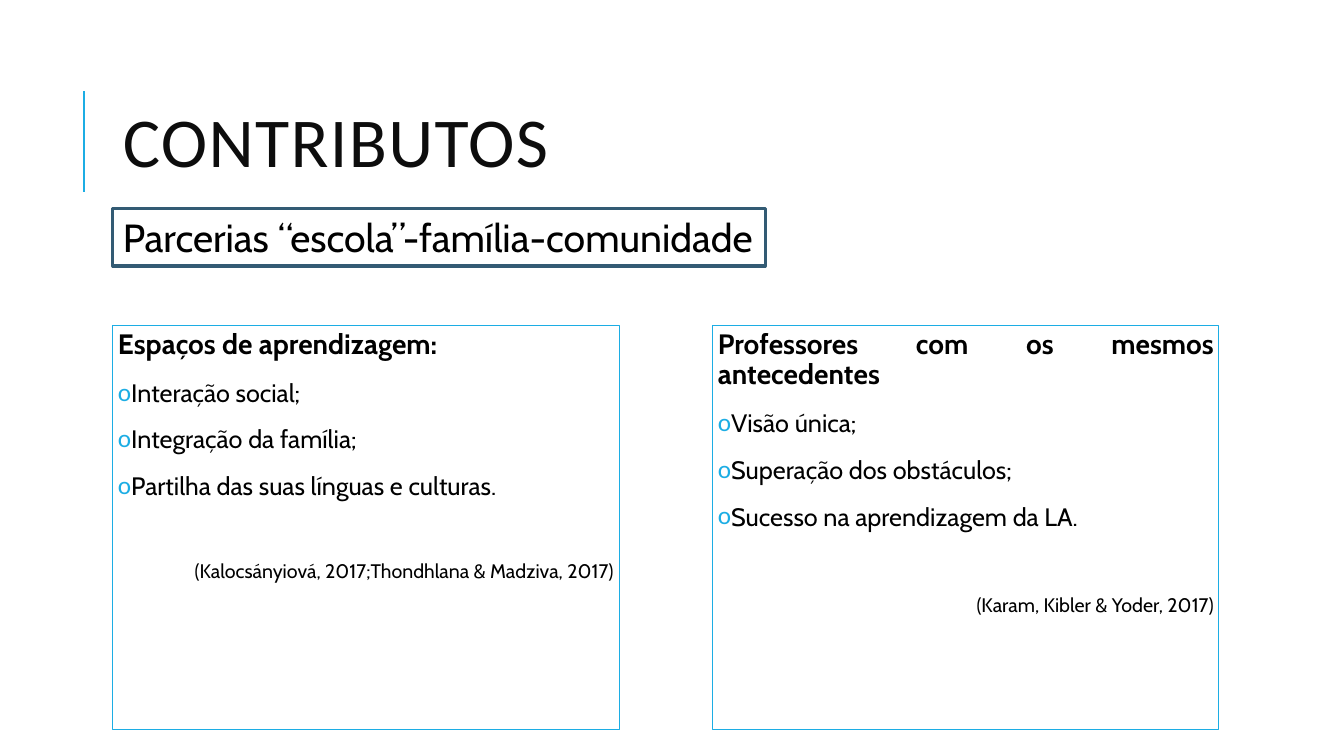
from lxml.etree import SubElement
from pptx import Presentation
from pptx.dml.color import RGBColor
from pptx.enum.shapes import MSO_CONNECTOR as Connector, MSO_SHAPE as Shape
from pptx.enum.text import MSO_ANCHOR as Anchor, PP_ALIGN as Align
from pptx.oxml.ns import qn
from pptx.util import Inches, Pt

COLORS = {"accent": "1CADE4", "frame": "335B74", "title": "0D0D0D", "text": "000000"}
WIDTH, HEIGHT = 13.33, 7.5
LEFT = 1.12
COLUMN_WIDTH, COLUMN_PITCH = 5.02, 5.95
INDENT = Inches(0.1)

COLUMNS = [
    {
        "heading": "Espaços de aprendizagem:",
        "items": ["Interação social;", "Integração da família;",
                  "Partilha das suas línguas e culturas."],
        "citation": "(Kalocsányiová, 2017;Thondhlana & Madziva, 2017)",
        "citation_gap": 41.3,
    },
    {
        "heading": "Professores com os mesmos antecedentes",
        "items": ["Visão única;", "Superação dos obstáculos;",
                  "Sucesso na aprendizagem da LA."],
        "citation": "(Karam, Kibler & Yoder, 2017)",
        "citation_gap": 43.5,
    },
]


def color(name):
    return RGBColor.from_string(COLORS[name])


def set_values(target, values):
    for name, value in values.items():
        setattr(target, name, value)


def style_line(line, name, width):
    line.color.rgb = color(name)
    line.width = Pt(width)


def write(paragraph, text, size, font="Cabin", ink="text", bold=False, **layout):
    run = paragraph.add_run()
    run.text = text
    set_values(run.font, {"name": font, "size": Pt(size), "bold": bold})
    run.font.color.rgb = color(ink)
    set_values(paragraph, layout)
    return run


def add_bullet(paragraph):
    properties = paragraph._p.get_or_add_pPr()
    properties.set("marL", str(INDENT))
    properties.set("indent", str(-INDENT))
    bullet_color = SubElement(properties, qn("a:buClr"))
    SubElement(bullet_color, qn("a:srgbClr"), val=COLORS["accent"])
    SubElement(properties, qn("a:buFont"), typeface="Calibri")
    SubElement(properties, qn("a:buChar"), char="o")


def add_frame(slide, box, line_color, line_width, anchor):
    shape = slide.shapes.add_shape(Shape.RECTANGLE, *map(Inches, box))
    shape.shadow.inherit = False
    shape.fill.background()
    style_line(shape.line, line_color, line_width)
    set_values(shape.text_frame, {"word_wrap": True, "vertical_anchor": anchor})
    return shape.text_frame


def add_title(slide, box, text):
    left, top, width, height = box
    rule_left, rule_top, rule_bottom = (
        Inches(value) for value in (left - 0.29, top + 0.26, top + 1.26))
    rule = slide.shapes.add_connector(
        Connector.STRAIGHT, rule_left, rule_bottom, rule_left, rule_top)
    style_line(rule.line, "accent", 1.5)
    SubElement(rule._element.spPr, qn("a:effectLst"))

    frame = slide.shapes.add_textbox(*map(Inches, box)).text_frame
    set_values(frame, {"word_wrap": True, "vertical_anchor": Anchor.MIDDLE})
    run = write(frame.paragraphs[0], text, 50, "Calibri", "title", line_spacing=0.8)
    run.font._element.set("spc", "100")


def add_subtitle(slide, box, text):
    frame = add_frame(slide, box, "frame", 2.25, Anchor.TOP)
    write(frame.paragraphs[0], text, 28, alignment=Align.LEFT)


def add_column(slide, box, content):
    frame = add_frame(slide, box, "accent", 0.75, Anchor.TOP)
    sides = ("left", "top", "right", "bottom")
    set_values(frame, {f"margin_{side}": Inches(0.05) for side in sides})
    layout = {"alignment": Align.JUSTIFY, "line_spacing": 0.9,
              "space_before": Pt(12), "space_after": Pt(2)}
    write(frame.paragraphs[0], content["heading"], 20, bold=True, **layout)
    for item in content["items"]:
        paragraph = frame.add_paragraph()
        write(paragraph, item, 18, **layout)
        add_bullet(paragraph)
    layout |= {"alignment": Align.RIGHT, "space_before": Pt(content["citation_gap"])}
    write(frame.add_paragraph(), content["citation"], 14, **layout)


def main():
    presentation = Presentation()
    set_values(presentation, {"slide_width": Inches(WIDTH), "slide_height": Inches(HEIGHT)})
    slide = presentation.slides.add_slide(presentation.slide_layouts[6])
    add_title(slide, (LEFT, 0.64, 10.63, 1.64), "CONTRIBUTOS")
    add_subtitle(slide, (LEFT, 2.07, 6.47, 0.57), "Parcerias “escola”-família-comunidade")
    for index, content in enumerate(COLUMNS):
        left = LEFT + index * COLUMN_PITCH
        add_column(slide, (left, 3.23, COLUMN_WIDTH, 4.01), content)
    presentation.save("out.pptx")


if __name__ == "__main__":
    main()
